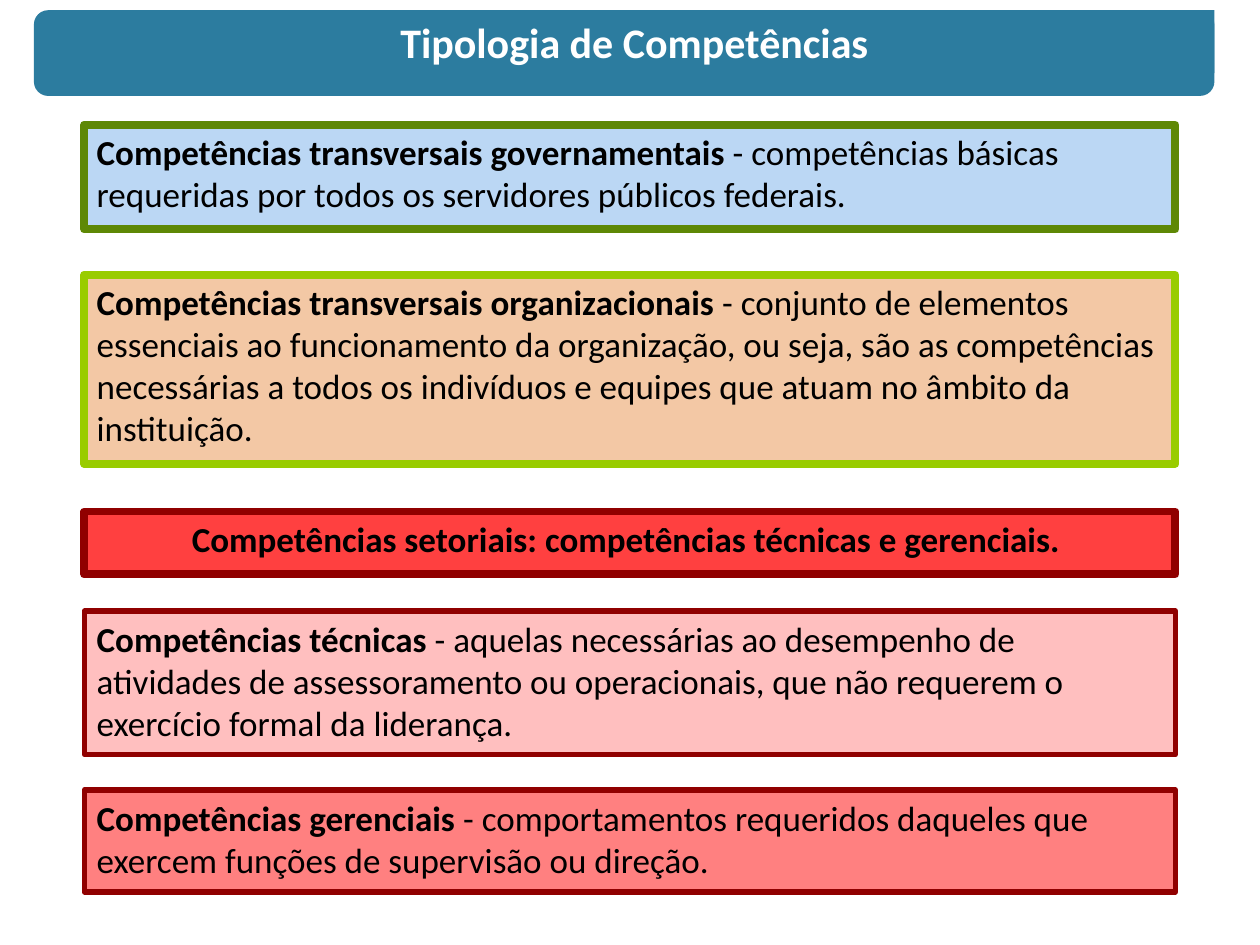
from lxml import etree
from pptx import Presentation
from pptx.dml.color import RGBColor
from pptx.enum.shapes import MSO_SHAPE as Shape
from pptx.enum.text import MSO_ANCHOR as Anchor, MSO_AUTO_SIZE as AutoSize, PP_ALIGN as Align
from pptx.oxml.ns import qn
from pptx.util import Pt

COLORS = {
    "banner": "2C7C9F", "white": "FFFFFF", "black": "000000",
    "blue": "B2D2F3", "green": "5E8805",
    "peach": "F3C8A5", "lime": "99CC00",
    "red": "FF4040", "pink": "FFBFBF", "coral": "FF8080", "dark red": "900000",
}
BOX_LEFT, BOX_WIDTH = 48.2, 623.5
TITLE_FONT = {"name": "Calibri", "size": Pt(24), "bold": True}
BODY_FONT = {"name": "Calibri", "size": Pt(20)}

# top, height, fill, border, border width, bold term, definition
DEFINITIONS = [
    (71.3, 59.8, "blue", "green", 4.5, "Competências transversais governamentais",
     " - competências básicas requeridas por todos os servidores públicos federais."),
    (157, 108, "peach", "lime", 4.5, "Competências transversais organizacionais",
     " - conjunto de elementos essenciais ao funcionamento da organização, ou seja, "
     "são as competências necessárias a todos os indivíduos e equipes que atuam no "
     "âmbito da instituição."),
    (292.3, 36, "red", "dark red", 4.5,
     "Competências setoriais: competências técnicas e gerenciais. ", ""),
    (349.2, 82.1, "pink", "dark red", 3, "Competências técnicas",
     " - aquelas necessárias ao desempenho de atividades de assessoramento ou "
     "operacionais, que não requerem o exercício formal da liderança."),
    (451.4, 58.3, "coral", "dark red", 3, "Competências gerenciais",
     " - comportamentos requeridos daqueles que exercem funções de supervisão ou direção."),
]


def color(name):
    return RGBColor.from_string(COLORS[name])


def set_fill(shape, name, opacity=100):
    shape.fill.solid()
    shape.fill.fore_color.rgb = color(name)
    if opacity < 100:
        tint = shape.element.spPr.find(qn("a:solidFill"))[0]
        etree.SubElement(tint, qn("a:alpha")).set("val", str(opacity * 1000))


def add_shape(page, kind, left, top, width, height, fill, opacity=100):
    shape = page.shapes.add_shape(kind, Pt(left), Pt(top), Pt(width), Pt(height))
    shape.shadow.inherit = False
    set_fill(shape, fill, opacity)
    return shape


def set_frame(frame):
    for key, value in {"word_wrap": True, "auto_size": AutoSize.NONE,
                       "vertical_anchor": Anchor.TOP}.items():
        setattr(frame, key, value)


def add_span(para, text, font, font_color, **extra):
    span = para.add_run()
    span.text = text
    for key, value in {**font, **extra}.items():
        setattr(span.font, key, value)
    span.font.color.rgb = color(font_color)


def add_banner(page, text):
    banner = add_shape(page, Shape.FLOWCHART_ALTERNATE_PROCESS, 19.4, 5.8, 674.6, 49, "banner")
    banner.line.fill.background()
    title = page.shapes.title
    for key, value in {"left": 31, "top": 5.8, "width": 663, "height": 36}.items():
        setattr(title, key, Pt(value))
    set_fill(title, "banner")
    set_frame(title.text_frame)
    para = title.text_frame.paragraphs[0]
    para.alignment = Align.CENTER
    add_span(para, text, TITLE_FONT, "white")
    # The banner lies behind the title
    title.element.addprevious(banner.element)


def add_definition(page, top, height, fill, border, border_width, term, meaning):
    box = add_shape(page, Shape.RECTANGLE, BOX_LEFT, top, BOX_WIDTH, height, fill,
                    87 if fill == "blue" else 100)
    box.line.color.rgb = color(border)
    box.line.width = Pt(border_width)
    set_frame(box.text_frame)
    para = box.text_frame.paragraphs[0]
    para.alignment = Align.LEFT if meaning else Align.CENTER
    add_span(para, term, BODY_FONT, "black", bold=True)
    if meaning:
        add_span(para, meaning, BODY_FONT, "black", bold=False)


def main():
    deck = Presentation()
    deck.slide_width, deck.slide_height = Pt(720), Pt(540)
    page = deck.slides.add_slide(deck.slide_layouts[5])  # title only

    # Heading
    add_banner(page, "Tipologia de Competências")

    # Competency types
    for definition in DEFINITIONS:
        add_definition(page, *definition)

    deck.save("out.pptx")


if __name__ == "__main__":
    main()
